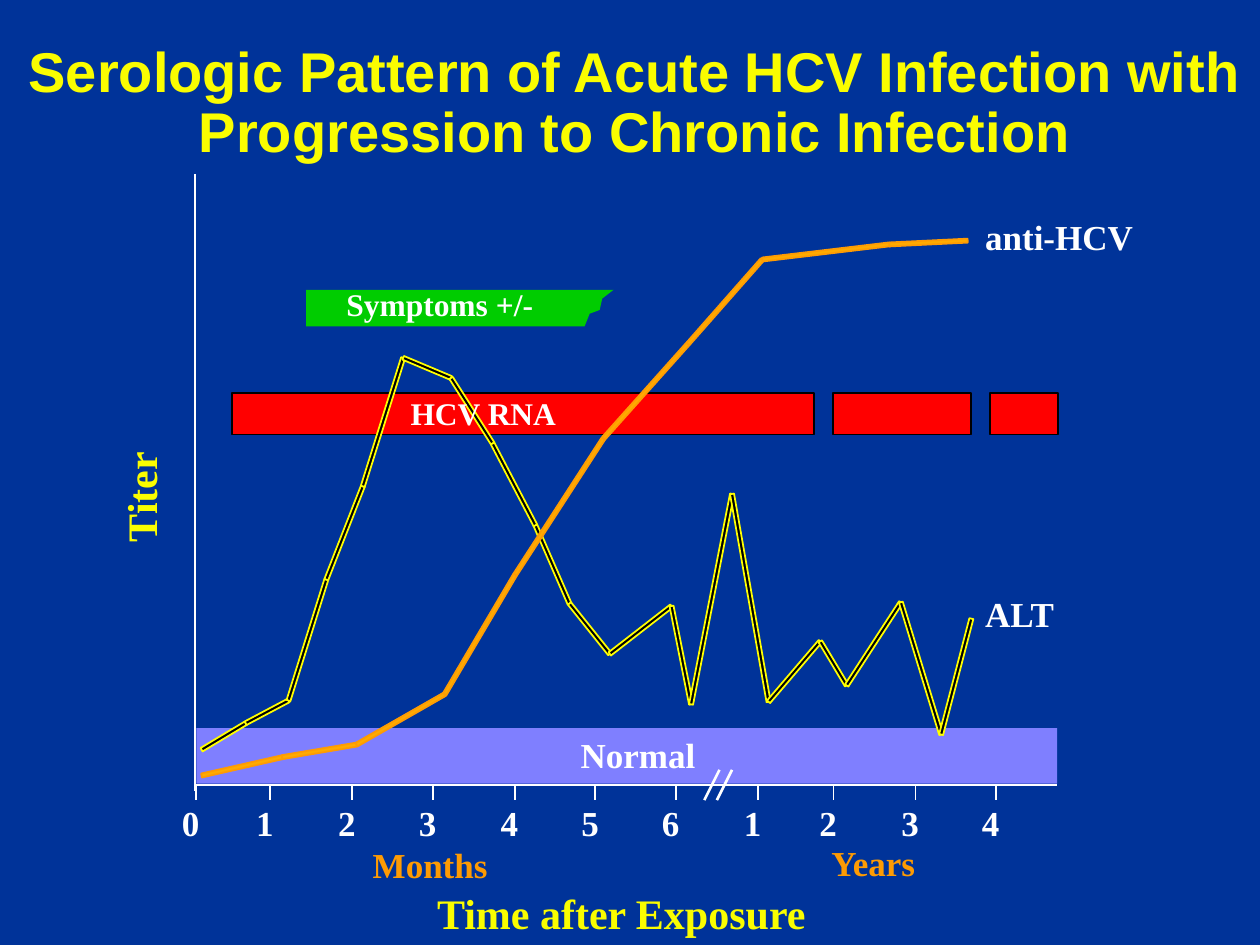
from itertools import pairwise
from math import hypot

from lxml.etree import SubElement
from pptx import Presentation
from pptx.dml.color import RGBColor as Rgb
from pptx.enum.shapes import MSO_CONNECTOR as Link, MSO_SHAPE as Form
from pptx.enum.text import MSO_ANCHOR as Anchor, MSO_AUTO_SIZE as Fit, PP_ALIGN as Align
from pptx.oxml.ns import qn
from pptx.util import Inches, Pt

COLS, ROWS = 100, 75
HUES = {
    "back": "003399", "title": "FAFD00", "white": "FFFFFF", "black": "000000",
    "red": "FF0000", "green": "00CC00", "band": "7F7FFF", "orange": "FE9B03",
    "amber": "FFAB00", "yellow": "FFFF00",
}
TICKS = [15.55, 21.45, 27.95, 34.35, 40.85, 47.25, 53.65, 60.15, 66.15, 72.65, 79.05]
MARKS = "01234561234"
ALT = [
    (16, 59.5), (19.5, 57.4), (22.9, 55.6), (25.9, 46), (28.8, 38.6),
    (32, 28.4), (35.8, 30), (39.1, 35.2), (42.5, 41.7), (45.2, 47.9),
    (48.4, 51.9), (53.3, 48.1), (54.85, 55.9), (58.1, 39.2), (61, 55.7),
    (65.1, 50.9), (67.2, 54.4), (71.5, 47.8), (74.7, 58.3), (77.1, 49.1),
]
ANTI = [
    (16, 61.55), (22.4, 60.1), (28.3, 59.1), (35.3, 55.1), (40.9, 45.6),
    (47.9, 34.8), (54.6, 27.3), (60.5, 20.6), (70.6, 19.4), (76.8, 19.1),
]
BADGE = [
    (24.3, 25.9), (46.4, 25.9), (46.8, 24.9), (47.6, 24.6),
    (47.8, 23.7), (48.7, 23), (24.3, 23),
]


def hue(name):
    return Rgb.from_string(HUES[name])


def write(frame, text, size=20, color="white", font="Times New Roman",
          align=Align.LEFT, space=0.9):
    para = frame.paragraphs[0]
    para.alignment = align
    para.line_spacing = space
    run = para.add_run()
    run.text = text
    run.font.size = Pt(size)
    run.font.name = font
    run.font.bold = True
    run.font.color.rgb = hue(color)


class Sheet:
    def __init__(self, deck):
        self.slide = deck.slides.add_slide(deck.slide_layouts.get_by_name("Title Only"))
        self.shapes = self.slide.shapes
        self.cell = deck.slide_width / COLS
        fill = self.slide.background.fill
        fill.solid()
        fill.fore_color.rgb = hue("back")

    def emu(self, *units):
        return [round(unit * self.cell) for unit in units]

    def paint(self, shape, fill, line=None):
        shape.shadow.inherit = False
        shape.fill.solid()
        shape.fill.fore_color.rgb = hue(fill)
        if line:
            shape.line.color.rgb = hue(line)
            shape.line.width = Pt(1)
        else:
            shape.line.fill.background()

    def title(self, text, *box):
        shape = self.shapes.title
        shape.left, shape.top, shape.width, shape.height = self.emu(*box)
        frame = shape.text_frame
        frame.word_wrap = True
        frame.auto_size = Fit.NONE
        frame.vertical_anchor = Anchor.MIDDLE
        write(frame, text, size=32, color="title", font="Arial", align=Align.CENTER)

    def text(self, text, *box, turn=0, **style):
        shape = self.shapes.add_textbox(*self.emu(*box))
        shape.rotation = turn
        frame = shape.text_frame
        frame.word_wrap = True
        frame.auto_size = Fit.SHAPE_TO_FIT_TEXT
        write(frame, text, **style)

    def bar(self, *box, fill, line=None):
        self.paint(self.shapes.add_shape(Form.RECTANGLE, *self.emu(*box)), fill, line)

    def shape(self, spots, fill, line=None):
        first, *rest = [self.emu(*spot) for spot in spots]
        pen = self.shapes.build_freeform(*first, scale=1.0)
        pen.add_line_segments(rest, close=True)
        self.paint(pen.convert_to_shape(), fill, line)

    def curve(self, spots, fill, line, half=0.16):
        for (x1, y1), (x2, y2) in pairwise(spots):
            span = hypot(x2 - x1, y2 - y1)
            dx, dy = half * (y2 - y1) / span, half * (x1 - x2) / span
            self.shape([(x1 + dx, y1 + dy), (x2 + dx, y2 + dy),
                        (x2 - dx, y2 - dy), (x1 - dx, y1 - dy)], fill, line)

    def line(self, *ends, width=1):
        link = self.shapes.add_connector(Link.STRAIGHT, *self.emu(*ends))
        link.line.color.rgb = hue("white")
        link.line.width = Pt(width)
        SubElement(link._element.spPr, qn("a:effectLst"))


def main():
    deck = Presentation()
    deck.slide_width, deck.slide_height = Inches(COLS / 10), Inches(ROWS / 10)
    page = Sheet(deck)
    page.title("Serologic Pattern of Acute HCV Infection with Progression to Chronic Infection",
               -1.7, 0.8, 104.2, 15)

    rna = {"fill": "red", "line": "black"}
    page.bar(18.4, 31.2, 46.2, 3.3, **rna)
    page.bar(15.6, 57.8, 68.3, 4.4, fill="band")

    page.line(15.45, 13.8, 15.45, 62.8)
    page.line(15.5, 62.3, 83.9, 62.3)
    for x, mark in zip(TICKS, MARKS):
        page.line(x, 62.4, x, 63.5)
        page.text(mark, x - 2.1, 63.5, 4.2, 4)

    page.curve(ALT, "black", "yellow")
    page.curve(ANTI, "amber", "orange")
    for x in (55.9, 56.9):
        page.line(x, 63.5, x + 1.2, 61.1, width=1.5)

    page.shape(BADGE, "green")
    page.text("Symptoms +/-", 26.5, 22.5, 19.8, 3.7, size=18)
    page.text("HCV RNA", 31.6, 30.8, 14.2, 4, size=18, space=1)
    page.text("Time after Exposure", 33.7, 70.4, 35.2, 4.6, size=24, color="title")
    page.text("Titer", 5.3, 35.6, 12.2, 4.6, turn=270, size=24, color="title")
    page.text("anti-HCV", 77.2, 17, 14.5, 4)
    page.text("ALT", 77.2, 46.9, 14.5, 4)
    page.text("Normal", 45.1, 58.1, 14.5, 4)
    page.text("Years", 65, 66.7, 12.3, 4, color="orange")
    page.text("Months", 28.6, 66.8, 15, 4, color="orange")

    page.bar(66.1, 31.2, 11, 3.3, **rna)
    page.bar(78.6, 31.2, 5.4, 3.3, **rna)
    deck.save("out.pptx")


if __name__ == "__main__":
    main()
